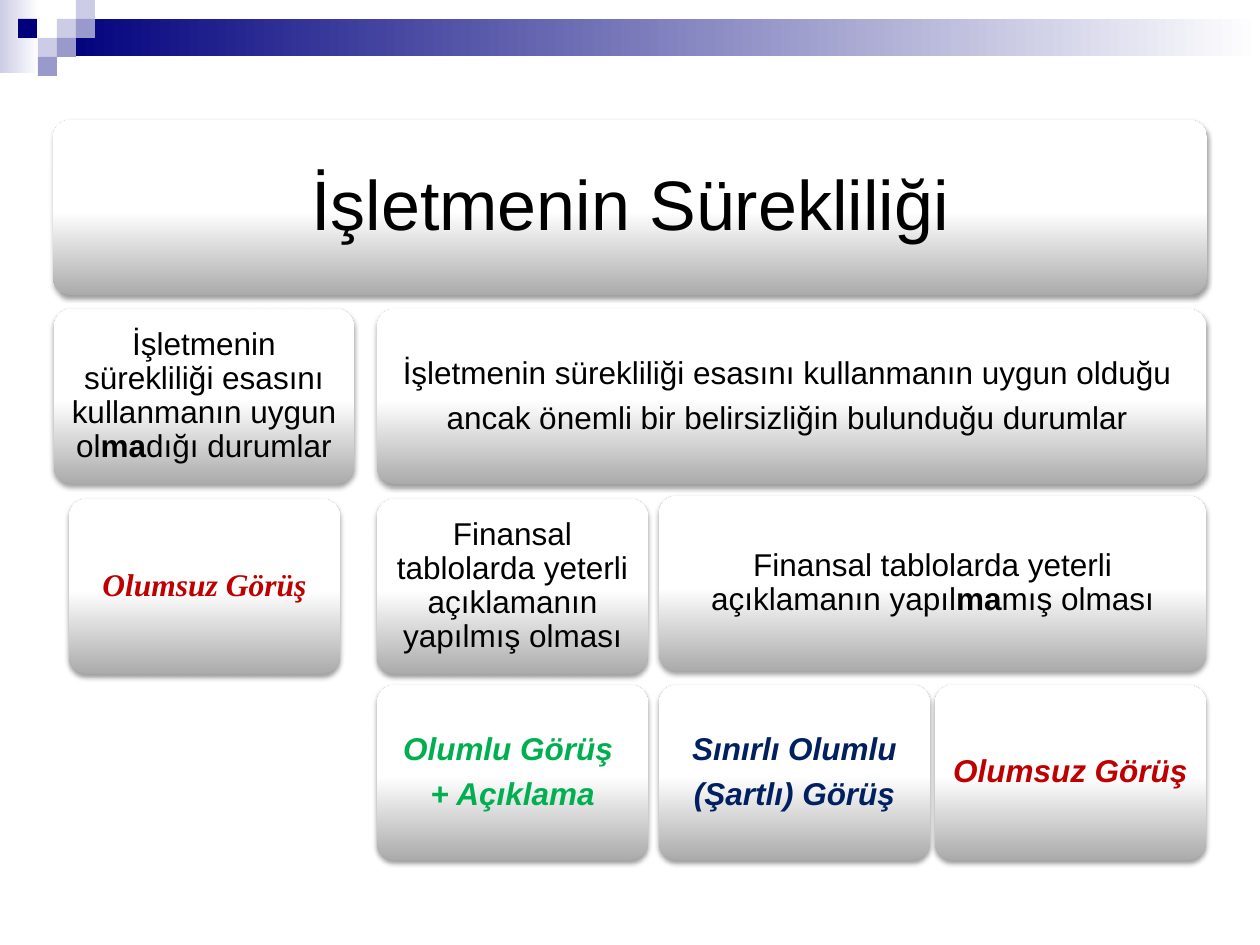
from pptx import Presentation
from pptx.dml.color import RGBColor
from pptx.enum.shapes import MSO_SHAPE
from pptx.enum.text import MSO_ANCHOR, PP_ALIGN
from pptx.oxml import parse_xml
from pptx.oxml.ns import nsdecls, qn
from pptx.util import Pt

RECT, ROUND = MSO_SHAPE.RECTANGLE, MSO_SHAPE.ROUNDED_RECTANGLE
CENTER, MIDDLE = PP_ALIGN.CENTER, MSO_ANCHOR.MIDDLE

SCALE = 914400 / 126
COLORS = {
    "black": "000000", "white": "FFFFFF", "gray": "ABABAB",
    "navy": "00007D", "lilac": "CCCCE6", "violet": "9999CC",
    "red": "C00000", "green": "00B050", "blue": "002060",
}

BANDS = [
    (0, 0, 39, 73, "lilac"),
    (57, 19, 1203, 37, "navy"),
]
SQUARE = 19
SQUARE_COLS = (18, 38, 57, 76)
SQUARES = [
    (2, 1, "lilac"), (3, 0, "lilac"), (3, 1, "violet"), (1, 2, "lilac"),
    (0, 1, "navy"), (2, 2, "violet"), (1, 3, "violet"),
]

BOX_W, BOX_H = 271, 175
OPINION_COLS = (377, 659, 935)
TITLE_Y, CASE_Y, DISCLOSURE_Y, OPINION_Y = 120, 309, 499, 685


def span(first, last):
    left = OPINION_COLS[first]
    return left, OPINION_COLS[last] + BOX_W - left


PLAIN = {"size": 18, "font": "Arial", "color": "black", "strong": False, "inset": 9}
TITLE = {**PLAIN, "size": 40, "inset": 21}
OPINION = {**PLAIN, "strong": True}
RED = {**OPINION, "color": "red"}

BOXES = [
    ((53, 1154), TITLE_Y, TITLE, [["İşletmenin Sürekliliği"]]),
    ((54, 300), CASE_Y, PLAIN,
     [["İşletmenin sürekliliği esasını kullanmanın uygun ol", "ma", "dığı durumlar"]]),
    ((69, BOX_W), DISCLOSURE_Y, {**RED, "font": "Times New Roman"}, [["Olumsuz Görüş"]]),
    (span(0, 2), CASE_Y, PLAIN,
     [["İşletmenin sürekliliği esasını kullanmanın uygun olduğu "],
      ["ancak önemli bir belirsizliğin bulunduğu durumlar "]]),
    (span(0, 0), DISCLOSURE_Y, PLAIN,
     [["Finansal tablolarda yeterli açıklamanın yapılmış olması"]]),
    (span(0, 0), OPINION_Y, {**OPINION, "color": "green"},
     [["Olumlu Görüş "], ["+ Açıklama"]]),
    (span(1, 2), DISCLOSURE_Y - 3, PLAIN,
     [["Finansal tablolarda yeterli açıklamanın yapıl", "ma", "mış olması"]]),
    (span(1, 1), OPINION_Y, {**OPINION, "color": "blue"},
     [["Sınırlı Olumlu"], ["(Şartlı) Görüş"]]),
    (span(2, 2), OPINION_Y, RED, [["Olumsuz Görüş"]]),
]


def px(n):
    return round(n * SCALE)


def rgb(name):
    return RGBColor.from_string(COLORS[name])


def add_shape(slide, kind, x, y, w, h):
    sp = slide.shapes.add_shape(kind, px(x), px(y), px(w), px(h))
    sp.line.fill.background()
    sp.shadow.inherit = False
    return sp


def fill_gradient(sp, stops, angle):
    gs = "".join(
        f'<a:gs pos="{pos * 1000}"><a:srgbClr val="{COLORS[name]}"/></a:gs>'
        for pos, name in stops)
    sp._element.spPr.insert(2, parse_xml(
        f'<a:gradFill {nsdecls("a")} rotWithShape="1"><a:gsLst>{gs}</a:gsLst>'
        f'<a:lin ang="{angle * 60000}" scaled="0"/></a:gradFill>'))


def add_shadow(sp):
    sp._element.spPr.find(qn("a:effectLst")).append(parse_xml(
        f'<a:outerShdw {nsdecls("a")} blurRad="{Pt(3.1)}" dist="{Pt(1.6)}" '
        f'dir="5400000" rotWithShape="0"><a:srgbClr val="{COLORS["black"]}">'
        '<a:alpha val="38000"/></a:srgbClr></a:outerShdw>'))


def write_text(sp, style, paragraphs):
    tf = sp.text_frame
    tf.word_wrap = True
    tf.vertical_anchor = MIDDLE
    tf.margin_left = tf.margin_right = px(style["inset"])
    tf.margin_top = tf.margin_bottom = px(style["inset"])
    for i, runs in enumerate(paragraphs):
        p = tf.add_paragraph() if i else tf.paragraphs[0]
        p.alignment = CENTER
        p.line_spacing = 0.9
        p.space_after = Pt(style["size"] * 0.35)
        p.font.size = Pt(style["size"])
        p.font.name = style["font"]
        p.font.color.rgb = rgb(style["color"])
        p.font.bold = p.font.italic = style["strong"]
        for j, text in enumerate(runs):
            r = p.add_run()
            r.text = text
            if j == 1:
                r.font.bold = True


def main():
    prs = Presentation()
    prs.slide_width, prs.slide_height = px(1260), px(945)
    slide = prs.slides.add_slide(prs.slide_layouts[6])

    for x, y, w, h, color in BANDS:
        sp = add_shape(slide, RECT, x, y, w, h)
        fill_gradient(sp, [(0, color), (100, "white")], 0)

    for col, row, color in SQUARES:
        sp = add_shape(slide, RECT, SQUARE_COLS[col], row * SQUARE, SQUARE, SQUARE)
        sp.fill.solid()
        sp.fill.fore_color.rgb = rgb(color)

    for (x, w), y, style, paragraphs in BOXES:
        sp = add_shape(slide, ROUND, x, y, w, BOX_H)
        sp.adjustments[0] = 0.1
        fill_gradient(sp, [(0, "gray"), (48, "white"), (100, "white")], 270)
        add_shadow(sp)
        write_text(sp, style, paragraphs)

    prs.save("out.pptx")


if __name__ == "__main__":
    main()
